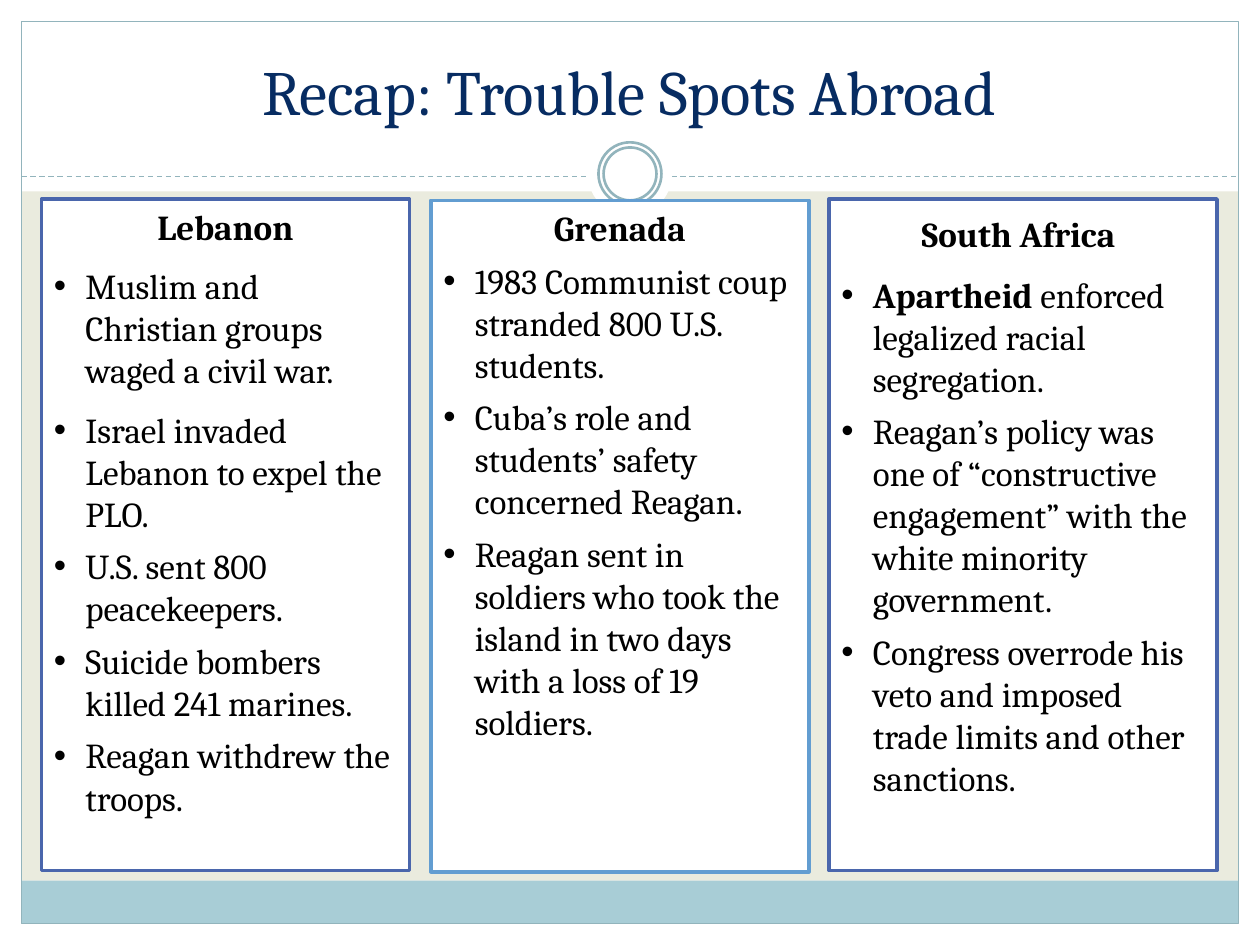
from lxml import etree
from pptx import Presentation
from pptx.dml.color import RGBColor
from pptx.enum.dml import MSO_LINE
from pptx.enum.shapes import MSO_CONNECTOR, MSO_SHAPE
from pptx.enum.text import MSO_ANCHOR, MSO_AUTO_SIZE, PP_ALIGN
from pptx.oxml.ns import qn
from pptx.util import Inches, Pt

RECT, OVAL = MSO_SHAPE.RECTANGLE, MSO_SHAPE.OVAL
LINE, DASH = MSO_CONNECTOR.STRAIGHT, MSO_LINE.DASH
TOP, FIT = MSO_ANCHOR.TOP, MSO_AUTO_SIZE.NONE
LEFT, CENTER = PP_ALIGN.LEFT, PP_ALIGN.CENTER

WHITE = RGBColor(0xFF, 0xFF, 0xFF)
BLACK = RGBColor(0, 0, 0)
SAND = RGBColor(0xEA, 0xEB, 0xDE)
TEAL = RGBColor(0xA8, 0xCD, 0xD6)
EDGE = RGBColor(0x92, 0xB4, 0xBC)
NAVY = RGBColor(0x07, 0x2C, 0x62)
BLUE = RGBColor(0x4A, 0x66, 0xAC)
SKY = RGBColor(0x62, 0x9D, 0xD1)
FONT = "Cambria"

TITLE = "Recap: Trouble Spots Abroad"
WIDE, NEAR = 10, 6

# Each run is (text, size, bold); each point is (space before, runs).


def plain(gap, text):
    return gap, [(text, 20, False)]


PANELS = [
    (0.33, 1.58, 2.92, BLUE, [("Lebanon", 20, True)], [
        plain(WIDE, "Muslim and Christian groups waged a civil war."),
        plain(WIDE, "Israel invaded Lebanon to expel the PLO."),
        plain(NEAR, "U.S. sent 800 peacekeepers."),
        plain(NEAR, "Suicide bombers killed 241 marines."),
        plain(NEAR, "Reagan withdrew the troops."),
    ]),
    (3.42, 1.59, 3, SKY, [("Grenada", 20, True)], [
        plain(NEAR, "1983 Communist coup stranded 800 U.S. students."),
        plain(NEAR, "Cuba’s role and students’ safety concerned Reagan."),
        plain(NEAR, "Reagan sent in soldiers who took the island in two days "
                    "with a loss of 19 soldiers."),
    ]),
    (6.58, 1.58, 3.08, BLUE, [("South Africa", 20, True), (" ", 24, False)], [
        (WIDE, [("Apartheid", 20, True),
                (" enforced legalized racial segregation.", 20, False)]),
        plain(NEAR, "Reagan’s policy was one of “constructive engagement” "
                    "with the white minority government."),
        plain(NEAR, "Congress overrode his veto and imposed trade limits "
                    "and other sanctions."),
    ]),
]
TALL = 5.33

deck = Presentation()
deck.slide_width, deck.slide_height = Inches(10), Inches(7.5)
slide = deck.slides.add_slide(deck.slide_layouts[5])


def draw(kind, box, fill=None, line=None, width=0.75):
    shape = slide.shapes.add_shape(kind, *map(Inches, box))
    shape.shadow.inherit = False
    if fill is None:
        shape.fill.background()
    else:
        shape.fill.solid()
        shape.fill.fore_color.rgb = fill
    if line is None:
        shape.line.fill.background()
    else:
        shape.line.color.rgb = line
        shape.line.width = Pt(width)
    return shape


def disc(size, **look):
    draw(OVAL, (5 - size / 2, 1.38 - size / 2, size, size), **look)


def write(para, runs, color):
    for text, size, bold in runs:
        run = para.add_run()
        run.text = text
        font = run.font
        font.name, font.size, font.bold = FONT, Pt(size), bold
        font.color.rgb = color


def style(para, align, gap, mark):
    para.alignment = align
    para.space_before = Pt(gap)
    props = para._p.get_or_add_pPr()
    props.set("marL", str(Inches(0.25)))
    props.set("indent", str(Inches(-0.25)))
    if mark:
        etree.SubElement(props, qn("a:buFont"), typeface="Arial")
        etree.SubElement(props, qn("a:buChar"), char="•")


def panel(left, top, width, edge, head, points):
    box = draw(RECT, (left, top, width, TALL), WHITE, edge, 2)
    frame = box.text_frame
    frame.word_wrap = True
    frame.vertical_anchor = TOP
    para = frame.paragraphs[0]
    style(para, CENTER, 0, False)
    write(para, head, BLACK)
    for gap, runs in points:
        para = frame.add_paragraph()
        style(para, LEFT, gap, True)
        write(para, runs, BLACK)


draw(RECT, (0.17, 1.52, 9.66, 5.47), SAND)
draw(RECT, (0.17, 6.99, 9.66, 0.34), TEAL)
draw(RECT, (0.17, 0.17, 9.66, 7.16), line=EDGE)
rule = slide.shapes.add_connector(
    LINE, Inches(0.17), Inches(1.4), Inches(9.83), Inches(1.4))
rule.line.color.rgb = EDGE
rule.line.width = Pt(0.75)
rule.line.dash_style = DASH
etree.SubElement(rule._element.spPr, qn("a:effectLst"))
disc(0.67, fill=WHITE)
for size in (0.5, 0.42):
    disc(size, line=EDGE, width=1.5)

title = slide.shapes.title
title.left, title.top = Inches(0.58), Inches(0.42)
title.width, title.height = Inches(8.83), Inches(0.61)
frame = title.text_frame
frame.margin_left = frame.margin_right = 0
frame.margin_top = frame.margin_bottom = 0
frame.word_wrap = True
frame.auto_size = FIT
frame.vertical_anchor = TOP
frame.paragraphs[0].alignment = CENTER
write(frame.paragraphs[0], [(TITLE, 36, False)], NAVY)

for item in PANELS:
    panel(*item)

deck.save("out.pptx")
